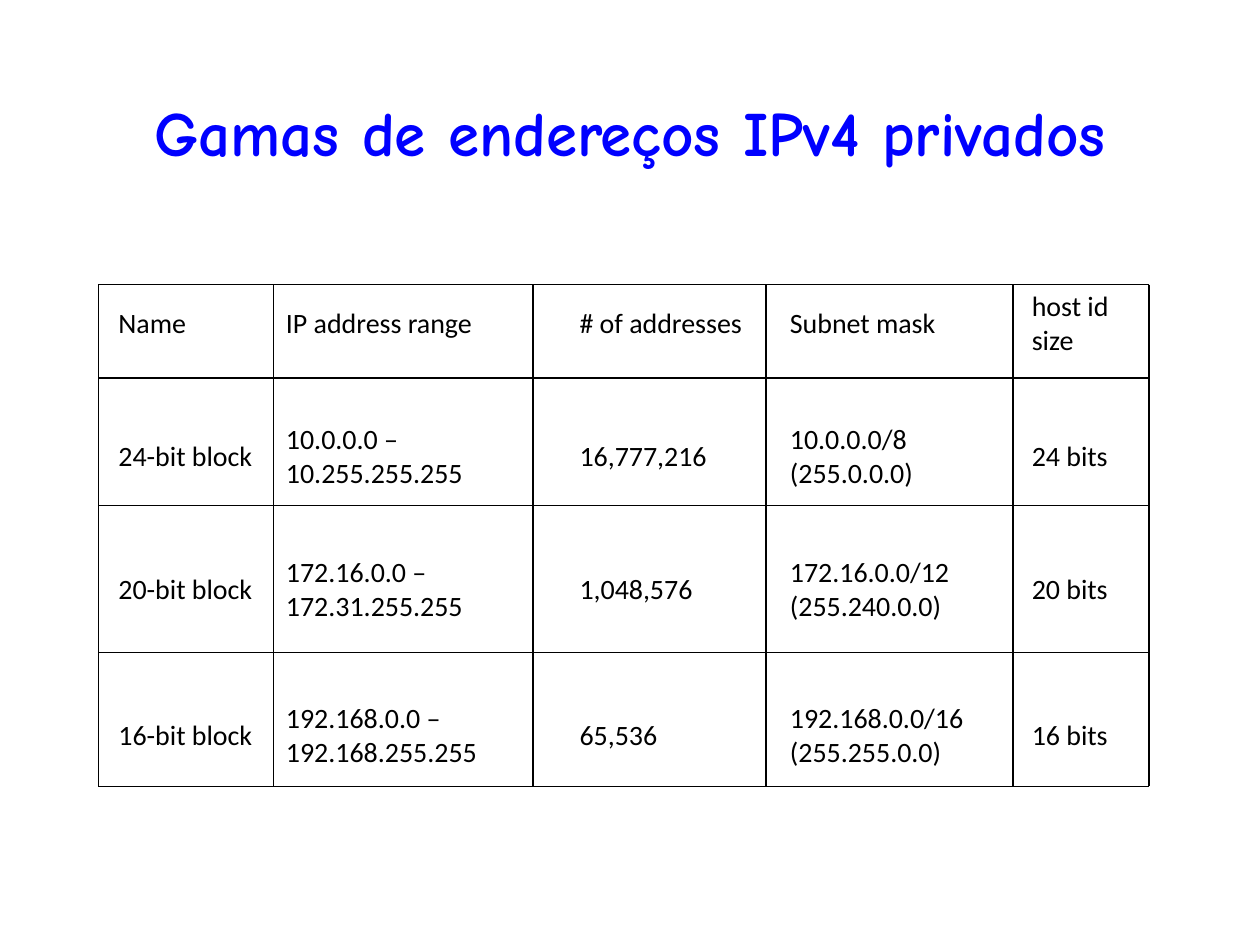
from typing import NamedTuple

from lxml import etree
from pptx import Presentation
from pptx.dml.color import RGBColor
from pptx.enum.shapes import MSO_CONNECTOR
from pptx.enum.text import MSO_ANCHOR, PP_ALIGN
from pptx.oxml.ns import qn
from pptx.util import Inches, Pt

STRAIGHT = MSO_CONNECTOR.STRAIGHT
MIDDLE = MSO_ANCHOR.MIDDLE
CENTER = PP_ALIGN.CENTER
BLACK = "000000"
BLUE = "0000FF"


class AddressBlock(NamedTuple):
    name: str
    address_range: str
    address_count: str
    subnet_mask: str
    host_id_size: str


HEADINGS = AddressBlock("Name", "IP address range", "# of addresses",
                        "Subnet mask", "host id size")
BLOCKS = [
    AddressBlock("24-bit block", "10.0.0.0 – 10.255.255.255", "16,777,216",
                 "10.0.0.0/8 (255.0.0.0)", "24 bits"),
    AddressBlock("20-bit block", "172.16.0.0 – 172.31.255.255", "1,048,576",
                 "172.16.0.0/12 (255.240.0.0)", "20 bits"),
    AddressBlock("16-bit block", "192.168.0.0 – 192.168.255.255", "65,536",
                 "192.168.0.0/16 (255.255.0.0)", "16 bits"),
]
COLUMN_WIDTHS = [1.33, 2.33, 1.67, 1.92, 1.08]
ROW_HEIGHTS = [1.16, 0.95, 1.16, 1.16]

# Ruled lines, independent of the table's own rows and columns
RULE_XS = [0.78, 2.17, 4.23, 6.08, 8.04, 9.12]
RULE_YS = [2.26, 3, 4.01, 5.18, 6.24]


def color(hex_value: str) -> RGBColor:
    return RGBColor.from_string(hex_value)


def format_text(text_frame, font_name: str, size: float, hex_value: str,
                bold: bool = False) -> None:
    for paragraph in text_frame.paragraphs:
        for run in paragraph.runs:
            run.font.name = font_name
            run.font.size = Pt(size)
            run.font.bold = bold
            run.font.color.rgb = color(hex_value)


def add_title(slide, text: str) -> None:
    title = slide.shapes.title
    title.left, title.top = Inches(0.5), Inches(0.42)
    title.width, title.height = Inches(9), Inches(1.25)
    title.text_frame.text = text
    title.text_frame.vertical_anchor = MIDDLE
    title.text_frame.paragraphs[0].alignment = CENTER
    format_text(title.text_frame, "Comic Neue", 36, BLUE, bold=True)


def fill_cell(cell, text: str) -> None:
    cell.text_frame.text = text
    cell.fill.background()
    cell.vertical_anchor = MIDDLE
    cell.margin_left = cell.margin_right = Inches(0.07)
    cell.margin_top = cell.margin_bottom = Inches(0.04)
    format_text(cell.text_frame, "Calibri", 16, BLACK)


def add_address_table(slide, records: list[AddressBlock]) -> None:
    table = slide.shapes.add_table(
        len(records), len(COLUMN_WIDTHS), Inches(0.87), Inches(1.99),
        Inches(sum(COLUMN_WIDTHS)), Inches(sum(ROW_HEIGHTS))).table
    table.first_row = table.horz_banding = False
    for column, width in zip(table.columns, COLUMN_WIDTHS):
        column.width = Inches(width)
    for row, height, record in zip(table.rows, ROW_HEIGHTS, records):
        row.height = Inches(height)
        for cell, text in zip(row.cells, record):
            fill_cell(cell, text)


def add_rule(slide, x1: float, y1: float, x2: float, y2: float) -> None:
    rule = slide.shapes.add_connector(
        STRAIGHT, Inches(x1), Inches(y1), Inches(x2), Inches(y2))
    rule.line.color.rgb = color(BLACK)
    rule.line.width = Pt(0.75)
    etree.SubElement(rule._element.spPr, qn("a:effectLst"))


def main() -> None:
    presentation = Presentation()
    presentation.slide_width = Inches(10)
    presentation.slide_height = Inches(7.5)
    slide = presentation.slides.add_slide(presentation.slide_layouts[5])

    add_title(slide, "Gamas de endereços IPv4 privados")
    add_address_table(slide, [HEADINGS, *BLOCKS])

    # Grid around and between the entries
    for x in RULE_XS:
        add_rule(slide, x, RULE_YS[0], x, RULE_YS[-1])
    for y in RULE_YS:
        add_rule(slide, RULE_XS[0], y, RULE_XS[-1], y)

    presentation.save("out.pptx")


if __name__ == "__main__":
    main()
